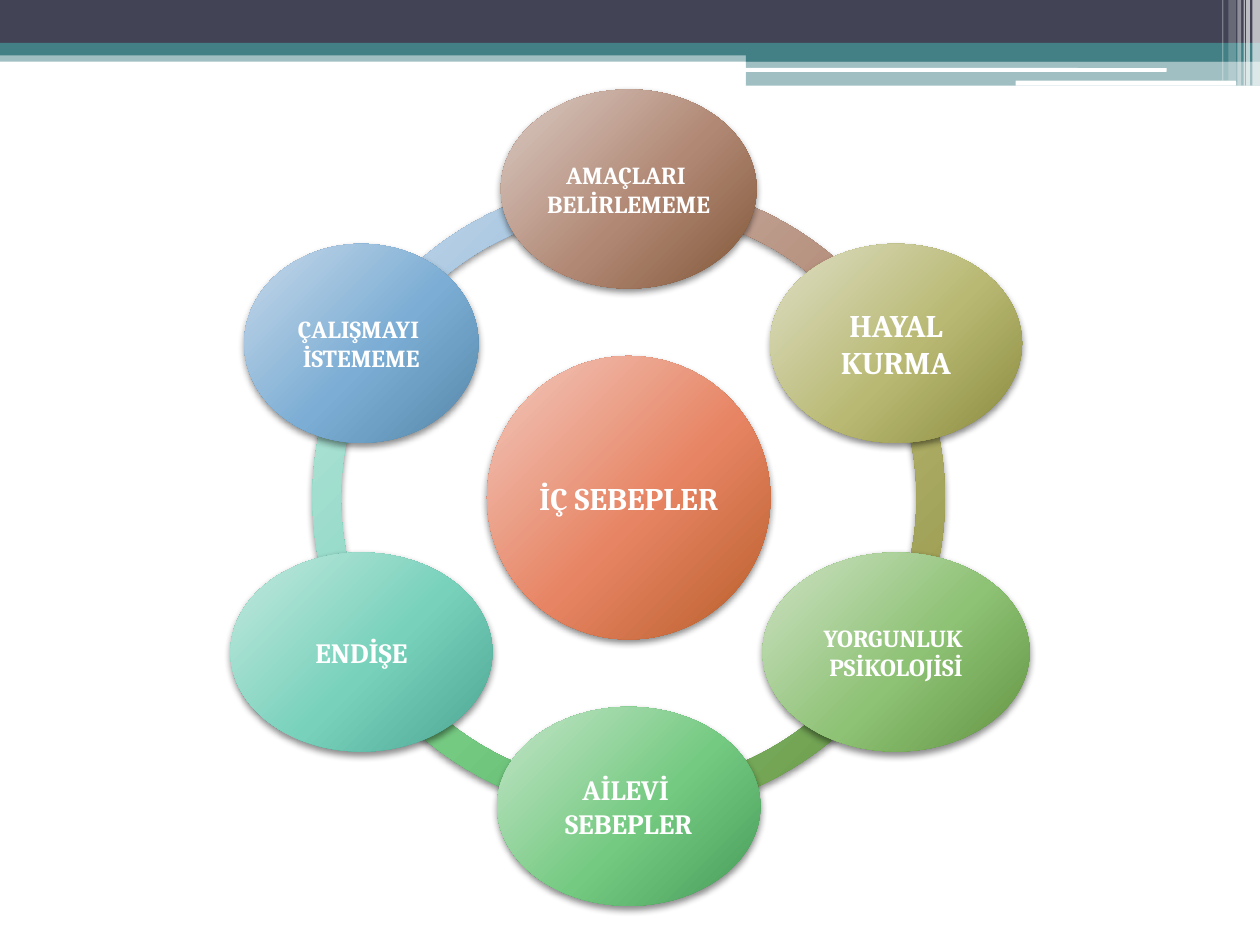
import math

import lxml.etree
import pptx
import pptx.dml.color
import pptx.enum.shapes
import pptx.enum.text
import pptx.oxml
import pptx.oxml.ns
import pptx.util

Inches = pptx.util.Inches
Shapes = pptx.enum.shapes.MSO_SHAPE
qn = pptx.oxml.ns.qn

# left, top, width, height, colour, opacity in percent
BANDS = [
    (0, 0.4, 10, 0.09, "438086", 50),
    (0, 0, 10, 0.34, "424456", 100),
    (0, 0.34, 10, 0.1, "438086", 100),
    (5.92, 0.39, 4.08, 0.1, "438086", 100),
    (5.92, 0.48, 4.08, 0.2, "438086", 50),
]
WHITE_BARS = [(5.91, 0.54, 3.35, 0.03), (8.06, 0.64, 1.75, 0.04)]
# left, width, height, opacity in percent
STRIPES = [
    (9.94, 0.06, 0.68, 65), (9.89, 0.03, 0.68, 65), (9.87, 0.01, 0.68, 60),
    (9.82, 0.03, 0.68, 40), (9.75, 0.06, 0.64, 20), (9.7, 0.01, 0.64, 30),
]

CENTER_X, CENTER_Y = 4.99, 3.95
RING_SIZE = 5.02
ORBIT = 2.45
HUB_SIZE = 2.25
CAUSE_HEIGHT = 1.58
HUB_COLORS = ("F2C9BF", "E78463", "B75E2A")
# lines, text size, width, gradient colours; clockwise from the top
CAUSES = [
    (["AMAÇLARI ", "BELİRLEMEME"], 14, 2.03, ("DBCCC6", "B18874", "825739")),
    (["HAYAL", "KURMA"], 18, 2.0, ("DEDFC6", "B9B974", "8A8B3D")),
    (["YORGUNLUK ", "PSİKOLOJİSİ"], 14, 2.12, ("CEE2C5", "8EC275", "629442")),
    (["AİLEVİ ", "SEBEPLER"], 16, 2.09, ("C5E5C9", "75CA82", "469D58")),
    (["ENDİŞE"], 16, 2.08, ("C5E9DF", "77D1BB", "4CA593")),
    (["ÇALIŞMAYI ", "İSTEMEME"], 14, 1.86, ("C7D9EA", "7CADD4", "5688A9")),
]
# Block arc adjustments count angles in units of 5/3 degree
FULL_TURN, ARC_SPAN, TOP = 216, 36, 162


def color(value):
    return pptx.dml.color.RGBColor.from_string(value)


def add_xml(parent, tag, **attributes):
    return lxml.etree.SubElement(parent, qn(tag), {k: str(v) for k, v in attributes.items()})


def apply_format(target, values):
    for name, value in values.items():
        setattr(target, name, value)


class SlideBuilder:
    FONT = {"name": "Cambria", "bold": True}
    FRAME = {
        "word_wrap": True,
        "vertical_anchor": pptx.enum.text.MSO_ANCHOR.MIDDLE,
        **dict.fromkeys(("margin_left", "margin_top", "margin_right", "margin_bottom"),
                        Inches(0.02)),
    }

    def __init__(self, slide):
        self.slide = slide

    def plain_shape(self, kind, left, top, width, height):
        shape = self.slide.shapes.add_shape(
            kind, Inches(left), Inches(top), Inches(width), Inches(height))
        shape.shadow.inherit = False
        shape.line.fill.background()
        return shape

    def band(self, left, top, width, height, fill, opacity=100, kind=Shapes.RECTANGLE):
        shape = self.plain_shape(kind, left, top, width, height)
        shape.fill.solid()
        shape.fill.fore_color.rgb = color(fill)
        if opacity < 100:
            solid = shape._element.spPr.find(qn("a:solidFill"))
            add_xml(solid[0], "a:alpha", val=opacity * 1000)

    def glossy_shape(self, kind, left, top, width, height, colors):
        """Add a shape with an off-centre radial gradient and a soft drop shadow."""
        shape = self.plain_shape(kind, left, top, width, height)
        shape.fill.background()
        properties = shape._element.spPr

        gradient = pptx.oxml.parse_xml(
            f'<a:gradFill {pptx.oxml.ns.nsdecls("a")} rotWithShape="1"/>')
        stops = add_xml(gradient, "a:gsLst")
        for position, value in zip((0, 55, 100), colors):
            stop = add_xml(stops, "a:gs", pos=position * 1000)
            add_xml(stop, "a:srgbClr", val=value)
        radial = add_xml(gradient, "a:path", path="circle")
        add_xml(radial, "a:fillToRect", l=-40000, t=-90000, r=140000, b=190000)
        properties.replace(properties.find(qn("a:noFill")), gradient)

        shadow = add_xml(properties.find(qn("a:effectLst")), "a:outerShdw",
                         blurRad=pptx.util.Pt(4), dist=pptx.util.Pt(2),
                         dir=90 * 60000, rotWithShape=0)
        add_xml(add_xml(shadow, "a:srgbClr", val="000000"), "a:alpha", val=45000)
        return shape

    def arc(self, start, colors):
        shape = self.glossy_shape(
            Shapes.BLOCK_ARC, CENTER_X - RING_SIZE / 2, CENTER_Y - RING_SIZE / 2,
            RING_SIZE, RING_SIZE, colors)
        for index, value in enumerate((start, (start + ARC_SPAN) % FULL_TURN, 0.045)):
            shape.adjustments[index] = value

    def bubble(self, center_x, center_y, width, height, lines, size, colors):
        shape = self.glossy_shape(
            Shapes.OVAL, center_x - width / 2, center_y - height / 2, width, height, colors)
        frame = shape.text_frame
        apply_format(frame, self.FRAME)
        for index, line in enumerate(lines):
            para = frame.add_paragraph() if index else frame.paragraphs[0]
            para.alignment = pptx.enum.text.PP_ALIGN.CENTER
            span = para.add_run()
            span.text = line
            apply_format(span.font, {**self.FONT, "size": pptx.util.Pt(size)})
            span.font.color.rgb = color("FFFFFF")


def main():
    deck = pptx.Presentation()
    apply_format(deck, {"slide_width": Inches(10), "slide_height": Inches(7.5)})
    page = SlideBuilder(deck.slides.add_slide(deck.slide_layouts[6]))

    for band in BANDS:
        page.band(*band)
    for bar in WHITE_BARS:
        page.band(*bar, "FFFFFF", kind=Shapes.ROUNDED_RECTANGLE)
    for left, width, height, opacity in STRIPES:
        page.band(left, 0, width, height, "FFFFFF", opacity)

    for index in reversed(range(len(CAUSES))):
        page.arc((TOP + index * ARC_SPAN) % FULL_TURN, CAUSES[index][-1])
    page.bubble(CENTER_X, CENTER_Y, HUB_SIZE, HUB_SIZE, ["İÇ SEBEPLER"], 18, HUB_COLORS)
    for index, (lines, size, width, colors) in enumerate(CAUSES):
        angle = index * math.tau / len(CAUSES)
        page.bubble(CENTER_X + ORBIT * math.sin(angle), CENTER_Y - ORBIT * math.cos(angle),
                    width, CAUSE_HEIGHT, lines, size, colors)

    deck.save("out.pptx")


if __name__ == "__main__":
    main()
